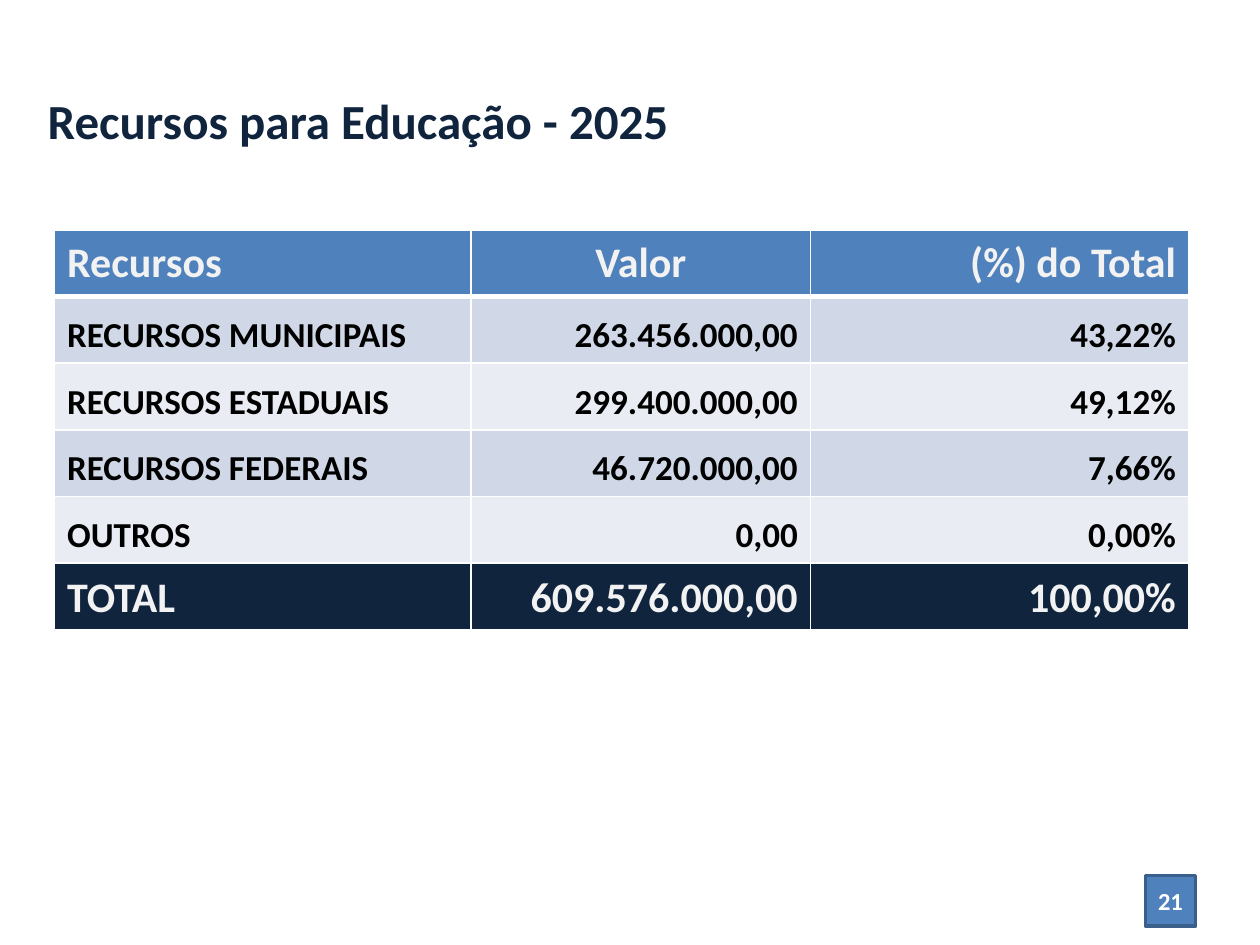
from dataclasses import dataclass

from lxml.etree import SubElement
from pptx import Presentation
from pptx.dml.color import RGBColor
from pptx.enum.shapes import MSO_SHAPE
from pptx.enum.text import MSO_ANCHOR, PP_ALIGN
from pptx.oxml.ns import qn
from pptx.slide import Slide
from pptx.table import _Cell
from pptx.text.text import TextFrame
from pptx.util import Pt


@dataclass(frozen=True)
class Theme:
    font: str = "Calibri"
    navy: str = "10243E"
    blue: str = "4F81BD"
    outline: str = "3A5F8B"
    band_dark: str = "D0D8E7"
    band_light: str = "E9ECF3"
    white: str = "FFFFFF"
    pale: str = "F2F2F2"
    black: str = "000000"
    title_size: float = 28
    strong_size: float = 24
    body_size: float = 20
    number_size: float = 14
    thin: float = 0.96
    thick: float = 3


@dataclass(frozen=True)
class RowStyle:
    fill: str
    color: str
    size: float
    anchor: MSO_ANCHOR = MSO_ANCHOR.BOTTOM
    value_align: PP_ALIGN = PP_ALIGN.RIGHT
    top: float = 0.96
    bottom: float = 0.96


@dataclass(frozen=True)
class Row:
    texts: tuple[str, str, str]
    style: RowStyle


THEME = Theme()
HEADER = RowStyle(THEME.blue, THEME.pale, THEME.strong_size, MSO_ANCHOR.MIDDLE,
                  PP_ALIGN.CENTER, bottom=THEME.thick)
FIRST = RowStyle(THEME.band_dark, THEME.black, THEME.body_size, top=THEME.thick)
DARK = RowStyle(THEME.band_dark, THEME.black, THEME.body_size)
LIGHT = RowStyle(THEME.band_light, THEME.black, THEME.body_size)
TOTAL = RowStyle(THEME.navy, THEME.pale, THEME.strong_size)

ROWS = (
    Row(("Recursos", "Valor", "(%) do Total"), HEADER),
    Row(("RECURSOS MUNICIPAIS", "263.456.000,00", "43,22%"), FIRST),
    Row(("RECURSOS ESTADUAIS", "299.400.000,00", "49,12%"), LIGHT),
    Row(("RECURSOS FEDERAIS", "46.720.000,00", "7,66%"), DARK),
    Row(("OUTROS", "0,00", "0,00%"), LIGHT),
    Row(("TOTAL", "609.576.000,00", "100,00%"), TOTAL),
)
COLUMN_WIDTHS = (238, 194, 216)
ROW_HEIGHT = 38.1


def write(frame: TextFrame, text: str, size: float, color: str,
          align: PP_ALIGN = PP_ALIGN.LEFT) -> None:
    paragraph = frame.paragraphs[0]
    paragraph.text = text
    paragraph.alignment = align
    font = paragraph.font
    font.name = THEME.font
    font.size = Pt(size)
    font.bold = True
    font.color.rgb = RGBColor.from_string(color)


def set_borders(cell: _Cell, style: RowStyle) -> None:
    properties = cell._tc.get_or_add_tcPr()
    widths = {"L": THEME.thin, "R": THEME.thin, "T": style.top, "B": style.bottom}
    for side, width in widths.items():
        line = SubElement(properties, qn(f"a:ln{side}"), w=str(Pt(width)))
        fill = SubElement(line, qn("a:solidFill"))
        SubElement(fill, qn("a:srgbClr"), val=THEME.white)


def add_title(page: Slide, text: str) -> None:
    box = page.shapes.add_textbox(Pt(20.2), Pt(37.4), Pt(532.8), Pt(62.6))
    box.text_frame.word_wrap = True
    box.text_frame.vertical_anchor = MSO_ANCHOR.MIDDLE
    write(box.text_frame, text, THEME.title_size, THEME.navy)


def add_resources_table(page: Slide) -> None:
    table = page.shapes.add_table(
        len(ROWS), len(COLUMN_WIDTHS), Pt(31.2), Pt(131.3),
        Pt(sum(COLUMN_WIDTHS)), Pt(ROW_HEIGHT * len(ROWS))).table
    for column, width in zip(table.columns, COLUMN_WIDTHS):
        column.width = Pt(width)
    for table_row, row in zip(table.rows, ROWS):
        table_row.height = Pt(ROW_HEIGHT)
        style = row.style
        aligns = (PP_ALIGN.LEFT, style.value_align, PP_ALIGN.RIGHT)
        for cell, text, align in zip(table_row.cells, row.texts, aligns):
            set_borders(cell, style)
            cell.fill.solid()
            cell.fill.fore_color.rgb = RGBColor.from_string(style.fill)
            cell.vertical_anchor = style.anchor
            write(cell.text_frame, text, style.size, style.color, align)


def add_page_number(page: Slide, number: str) -> None:
    box = page.shapes.add_shape(MSO_SHAPE.RECTANGLE, Pt(654.5), Pt(500.4), Pt(28.8), Pt(28.8))
    box.shadow.inherit = False
    box.fill.solid()
    box.fill.fore_color.rgb = RGBColor.from_string(THEME.blue)
    box.line.color.rgb = RGBColor.from_string(THEME.outline)
    box.line.width = Pt(2)
    frame = box.text_frame
    frame.margin_left = frame.margin_right = Pt(0)
    frame.vertical_anchor = MSO_ANCHOR.MIDDLE
    write(frame, number, THEME.number_size, THEME.white, PP_ALIGN.CENTER)


def main() -> None:
    deck = Presentation()
    deck.slide_width = Pt(720)
    deck.slide_height = Pt(540)
    page = deck.slides.add_slide(deck.slide_layouts[6])
    add_title(page, "Recursos para Educação - 2025")
    add_resources_table(page)
    add_page_number(page, "21")
    deck.save("out.pptx")


if __name__ == "__main__":
    main()
